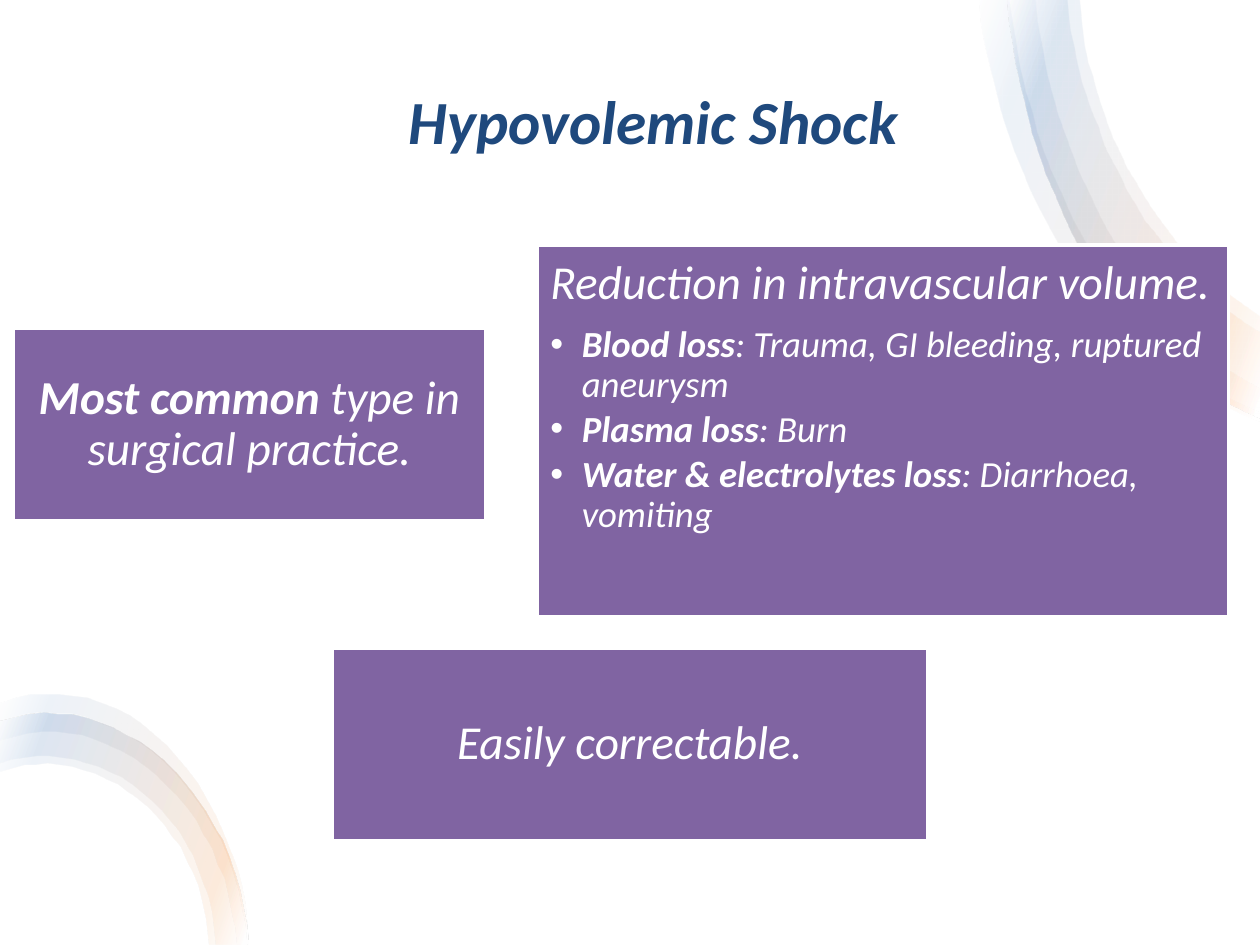
"""Build the Hypovolemic Shock slide with three cards and two corner swooshes."""
from lxml.etree import SubElement
from pptx import Presentation
from pptx.dml.color import RGBColor
from pptx.enum.shapes import MSO_SHAPE
from pptx.enum.text import MSO_ANCHOR, MSO_AUTO_SIZE, PP_ALIGN
from pptx.oxml import parse_xml
from pptx.oxml.ns import nsdecls, qn
from pptx.util import Pt

COLORS = {"title": "1F497D", "card": "8064A2", "white": "FFFFFF",
          "orange": "F79646", "blue": "4F81BD"}
FONT = "Calibri"
CURVE_STEPS = 24


def curve_points(start, control_1, control_2, end):
    """Return points along a cubic curve."""
    points = []
    for step in range(CURVE_STEPS + 1):
        t = step / CURVE_STEPS
        weights = ((1 - t) ** 3, 3 * t * (1 - t) ** 2, 3 * t ** 2 * (1 - t), t ** 3)
        points.append(tuple(
            sum(weight * point[axis] for weight, point in
                zip(weights, (start, control_1, control_2, end)))
            for axis in (0, 1)))
    return points


def write_paragraph(paragraph, bold_text, plain_text, size, space_after):
    """Write an italic paragraph with an optional bold beginning."""
    paragraph.line_spacing = 0.9
    paragraph.space_before = Pt(0)
    paragraph.space_after = Pt(space_after)
    for text, bold in ((bold_text, True), (plain_text, False)):
        if text:
            run = paragraph.add_run()
            run.text = text
            run.font.name = FONT
            run.font.size = Pt(size)
            run.font.bold = bold
            run.font.italic = True
            run.font.color.rgb = RGBColor.from_string(COLORS["white"])


presentation = Presentation()
presentation.slide_width = Pt(720)
presentation.slide_height = Pt(540)
slide = presentation.slides.add_slide(presentation.slide_layouts[1])

top_edge = ((576, 0), (585, 102), (634, 205), (720, 239))
bottom_edge = ((142, 540), (137, 454), (65, 389), (0, 412))
bands = [
    (((560, 0), (570, 101), (626, 205), (720, 241)),
     ((577, 0), (588, 102), (644, 205), (720, 236))),
    (top_edge, ((617, 0), (622, 72), (662, 144), (720, 181))),
    (top_edge, ((592, 0), (600, 86), (648, 187), (720, 222))),
    (top_edge, ((610, 0), (616, 72), (659, 155), (720, 190))),
    (bottom_edge, ((119, 540), (115, 468), (54, 421), (0, 441))),
    (bottom_edge, ((123, 540), (119, 464), (56, 418), (0, 436))),
    (bottom_edge, ((135, 540), (130, 461), (63, 400), (0, 423))),
    (((142.5, 540), (137, 446), (68, 376), (0, 402)),
     ((141, 540), (135, 454), (65, 389), (0, 412))),
]
gradient_stops = "".join(
    f'<a:gs pos="{position * 1000}"><a:srgbClr val="{COLORS[name]}">'
    '<a:alpha val="10000"/></a:srgbClr></a:gs>'
    for position, name in ((2, "white"), (16, "orange"), (85, "blue"), (100, "white")))
for outer_edge, inner_edge in bands:
    outline = curve_points(*outer_edge) + curve_points(*inner_edge)[::-1]
    builder = slide.shapes.build_freeform(*outline[0], scale=Pt(1))
    builder.add_line_segments(outline[1:], close=True)
    band = builder.convert_to_shape()
    band.shadow.inherit = False
    band.line.fill.background()
    band.element.spPr.find(qn("a:custGeom")).addnext(parse_xml(
        f'<a:gradFill {nsdecls("a")} rotWithShape="1"><a:gsLst>{gradient_stops}</a:gsLst>'
        f'<a:lin ang="{200 * 60000}" scaled="0"/></a:gradFill>'))

title = slide.shapes.title
title.left, title.top, title.width, title.height = Pt(47.5), Pt(0), Pt(625), Pt(93)
title.text_frame.text = "Hypovolemic Shock"
title.text_frame.auto_size = MSO_AUTO_SIZE.NONE
title.text_frame.vertical_anchor = MSO_ANCHOR.BOTTOM
title.text_frame.margin_left = Pt(34)
title_paragraph = title.text_frame.paragraphs[0]
title_paragraph.alignment = PP_ALIGN.CENTER
title_font = title_paragraph.runs[0].font
title_font.name = FONT
title_font.size = Pt(35)
title_font.bold = title_font.italic = True
title_font.color.rgb = RGBColor.from_string(COLORS["title"])

common_card = slide.shapes.add_shape(
    MSO_SHAPE.RECTANGLE, Pt(7.5), Pt(187.5), Pt(270), Pt(110))
causes_card = slide.placeholders[1]
causes_card.left, causes_card.top = Pt(307), Pt(140)
causes_card.width, causes_card.height = Pt(395), Pt(212.5)
slide.shapes.element.append(causes_card.element)
correctable_card = slide.shapes.add_shape(
    MSO_SHAPE.RECTANGLE, Pt(190), Pt(370.5), Pt(340), Pt(110))

cards = [
    (common_card, "Most common ", "type in surgical practice."),
    (causes_card, "", "Reduction in intravascular volume."),
    (correctable_card, "", "Easily correctable."),
]
for card, bold_text, plain_text in cards:
    card.fill.solid()
    card.fill.fore_color.rgb = RGBColor.from_string(COLORS["card"])
    card.line.color.rgb = RGBColor.from_string(COLORS["white"])
    card.line.width = Pt(2)
    text_frame = card.text_frame
    text_frame.word_wrap = True
    text_frame.auto_size = MSO_AUTO_SIZE.NONE
    text_frame.margin_left = text_frame.margin_right = Pt(7.5)
    text_frame.margin_top = text_frame.margin_bottom = Pt(7.5)
    paragraph = text_frame.paragraphs[0]
    write_paragraph(paragraph, bold_text, plain_text, 27, 9.45)
    if card is causes_card:
        text_frame.vertical_anchor = MSO_ANCHOR.TOP
        properties = paragraph._p.get_or_add_pPr()
        properties.set("marL", "0")
        properties.set("indent", "0")
        SubElement(properties, qn("a:buNone"))
    else:
        card.shadow.inherit = False
        text_frame.vertical_anchor = MSO_ANCHOR.MIDDLE
        paragraph.alignment = PP_ALIGN.CENTER

causes = [
    ("Blood loss", ": Trauma, GI bleeding, ruptured aneurysm"),
    ("Plasma loss", ": Burn"),
    ("Water & electrolytes loss", ": Diarrhoea, vomiting"),
]
for cause, examples in causes:
    paragraph = causes_card.text_frame.add_paragraph()
    paragraph.level = 1
    properties = paragraph._p.get_or_add_pPr()
    properties.set("marL", str(Pt(18)))
    properties.set("indent", str(-Pt(18)))
    SubElement(properties, qn("a:buChar"), char="•")
    write_paragraph(paragraph, cause, examples, 21, 3.15)

presentation.save("out.pptx")
